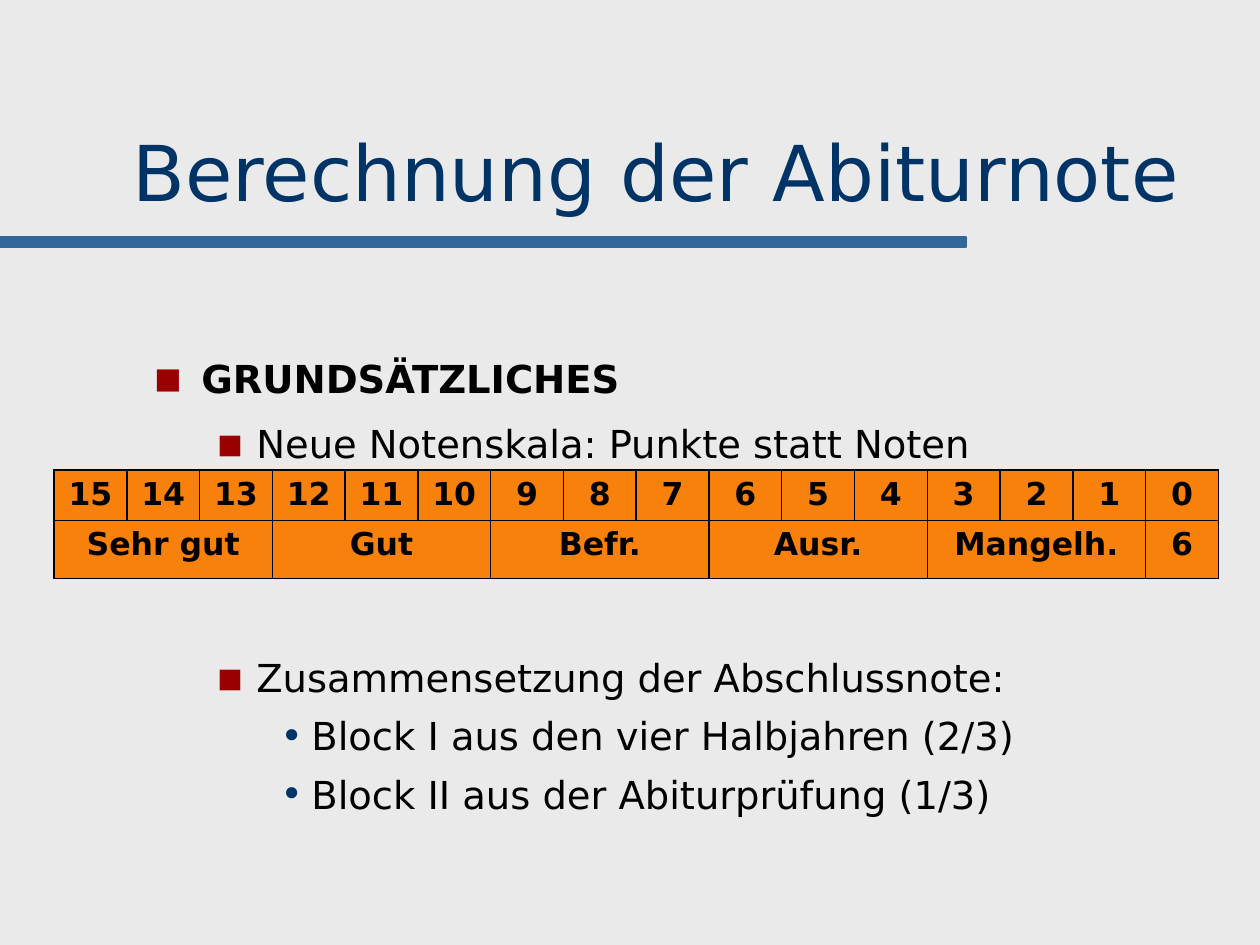
from dataclasses import dataclass

from lxml.etree import SubElement
from pptx import Presentation
from pptx.dml.color import RGBColor
from pptx.enum.shapes import MSO_SHAPE
from pptx.enum.text import MSO_ANCHOR, MSO_AUTO_SIZE, PP_ALIGN
from pptx.oxml.ns import qn
from pptx.util import Inches, Pt

TITLE = "Berechnung der Abiturnote"
# level, text, space before in points
OUTLINE = [
    (0, "GRUNDSÄTZLICHES", 0),
    (1, "Neue Notenskala: Punkte statt Noten", 13.5),
    (1, "Zusammensetzung der Abschlussnote:", 110),
    (2, "Block I aus den vier Halbjahren (2/3)", 9.5),
    (2, "Block II aus der Abiturprüfung (1/3)", 9.5),
]
POINTS = list(range(15, -1, -1))
# grade, number of point columns it covers
GRADES = [("Sehr gut", 3), ("Gut", 3), ("Befr.", 3), ("Ausr.", 3), ("Mangelh.", 3), ("6", 1)]


@dataclass(frozen=True)
class Theme:
    font: str = "DejaVu Sans"
    background: str = "EAEAEA"
    navy: str = "003366"
    bar: str = "336699"
    text: str = "000000"
    bullet: str = "9A0000"
    cell: str = "F7810B"
    title_size: int = 44
    body_size: int = 22
    table_size: int = 18


THEME = Theme()
# per level: left margin px, hanging px, bullet, colour, bullet size in percent
LEVELS = [
    (47, 47, "■", THEME.bullet, 75),
    (102, 39, "■", THEME.bullet, 70),
    (157, 31, "•", THEME.navy, 100),
]
TITLE_BOX = (120, 118, 1125, 106)
BAR_BOX = (0, 237, 966, 10)
BODY_BOX = (142, 354, 1118, 488)
TABLE_BOX = (54, 470, 1165, 108)
ROW_HEIGHTS = (50, 58)


def px(value):
    return round(value * Inches(1) / 126)


def box(values):
    return [px(value) for value in values]


def rgb(value):
    return RGBColor.from_string(value)


def style(paragraph, size, color, bold=False):
    font = paragraph.font
    font.name, font.size, font.bold = THEME.font, Pt(size), bold
    font.color.rgb = rgb(color)


def add_bullet(paragraph, level):
    margin, hanging, character, color, percent = LEVELS[level]
    properties = paragraph._p.get_or_add_pPr()
    properties.set("marL", str(px(margin)))
    properties.set("indent", str(-px(hanging)))
    bullet_color = SubElement(properties, qn("a:buClr"))
    SubElement(bullet_color, qn("a:srgbClr"), val=color)
    SubElement(properties, qn("a:buSzPct"), val=str(percent * 1000))
    SubElement(properties, qn("a:buFont"), typeface=THEME.font)
    SubElement(properties, qn("a:buChar"), char=character)


def add_borders(cell):
    properties = cell._tc.get_or_add_tcPr()
    for index, side in enumerate(("lnL", "lnR", "lnT", "lnB")):
        line = properties.makeelement(qn(f"a:{side}"), {"w": str(Pt(1))})
        fill = SubElement(line, qn("a:solidFill"))
        SubElement(fill, qn("a:srgbClr"), val=THEME.text)
        properties.insert(index, line)


def fill_cell(cell, text):
    cell.text = str(text)
    paragraph = cell.text_frame.paragraphs[0]
    paragraph.alignment = PP_ALIGN.CENTER
    style(paragraph, THEME.table_size, THEME.text, bold=True)


def add_title(slide):
    title = slide.shapes.title
    title.left, title.top, title.width, title.height = box(TITLE_BOX)
    frame = title.text_frame
    frame.text = TITLE
    frame.word_wrap = True
    frame.auto_size = MSO_AUTO_SIZE.NONE
    frame.vertical_anchor = MSO_ANCHOR.BOTTOM
    paragraph = frame.paragraphs[0]
    paragraph.alignment = PP_ALIGN.LEFT
    paragraph.line_spacing = 0.9
    style(paragraph, THEME.title_size, THEME.navy)


def add_bar(slide):
    bar = slide.shapes.add_shape(MSO_SHAPE.RECTANGLE, *box(BAR_BOX))
    bar.shadow.inherit = False
    bar.fill.solid()
    bar.fill.fore_color.rgb = rgb(THEME.bar)
    bar.line.color.rgb = rgb(THEME.bar)
    bar.line.width = Pt(0.75)


def add_outline(slide):
    frame = slide.shapes.add_textbox(*box(BODY_BOX)).text_frame
    frame.word_wrap = True
    for index, (level, text, space) in enumerate(OUTLINE):
        paragraph = frame.add_paragraph() if index else frame.paragraphs[0]
        paragraph.text = text
        paragraph.level = level
        paragraph.line_spacing = 0.9
        paragraph.space_before = Pt(space)
        add_bullet(paragraph, level)
        style(paragraph, THEME.body_size, THEME.text, bold=level == 0)


def add_scale(slide):
    count = len(POINTS)
    table = slide.shapes.add_table(2, count, *box(TABLE_BOX)).table
    table.first_row = table.horz_banding = False
    for column in table.columns:
        column.width = px(TABLE_BOX[2] / count)
    for row, height in zip(table.rows, ROW_HEIGHTS):
        row.height = px(height)
    for cell in table.iter_cells():
        cell.fill.solid()
        cell.fill.fore_color.rgb = rgb(THEME.cell)
        add_borders(cell)
    for index, points in enumerate(POINTS):
        fill_cell(table.cell(0, index), points)
    start = 0
    for grade, span in GRADES:
        cell = table.cell(1, start)
        if span > 1:
            cell.merge(table.cell(1, start + span - 1))
        fill_cell(cell, grade)
        start += span


def main():
    presentation = Presentation()
    presentation.slide_width, presentation.slide_height = Inches(10), Inches(7.5)
    slide = presentation.slides.add_slide(presentation.slide_layouts[5])
    slide.background.fill.solid()
    slide.background.fill.fore_color.rgb = rgb(THEME.background)
    add_bar(slide)
    add_title(slide)
    add_outline(slide)
    add_scale(slide)
    presentation.save("out.pptx")


if __name__ == "__main__":
    main()
